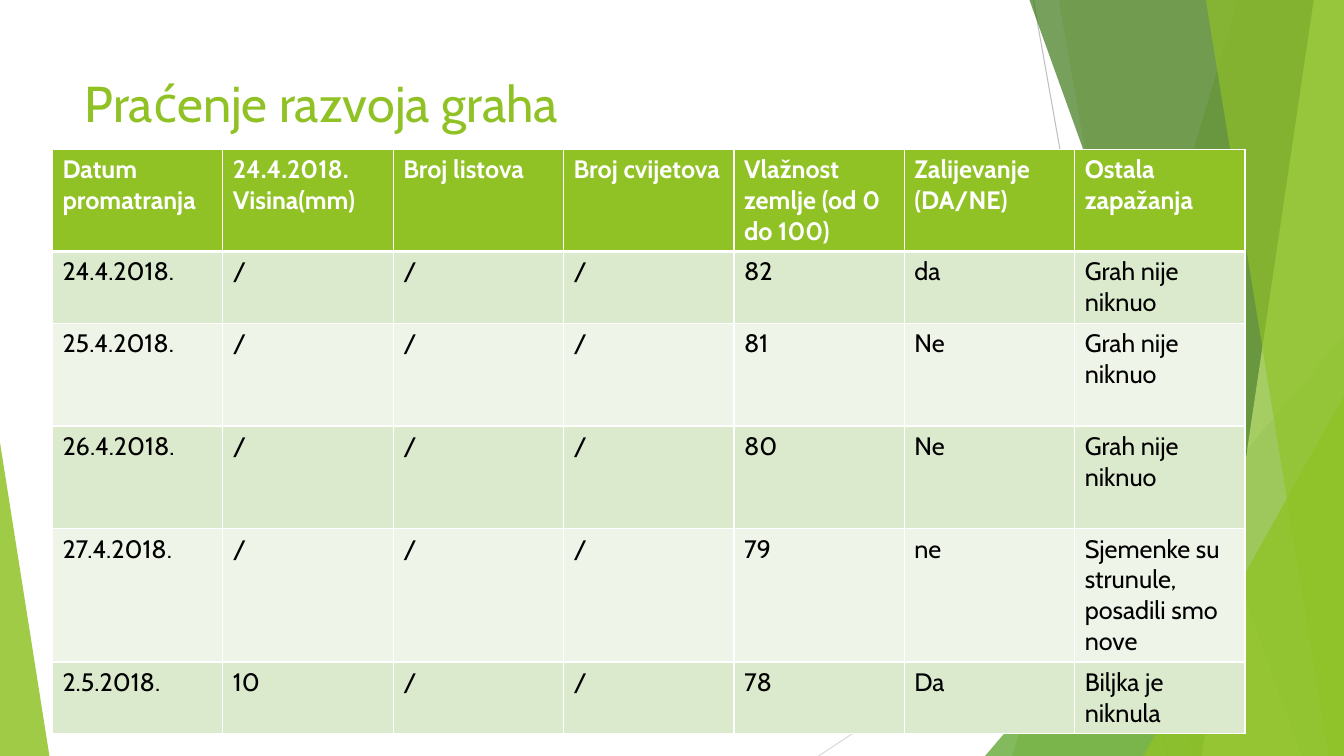
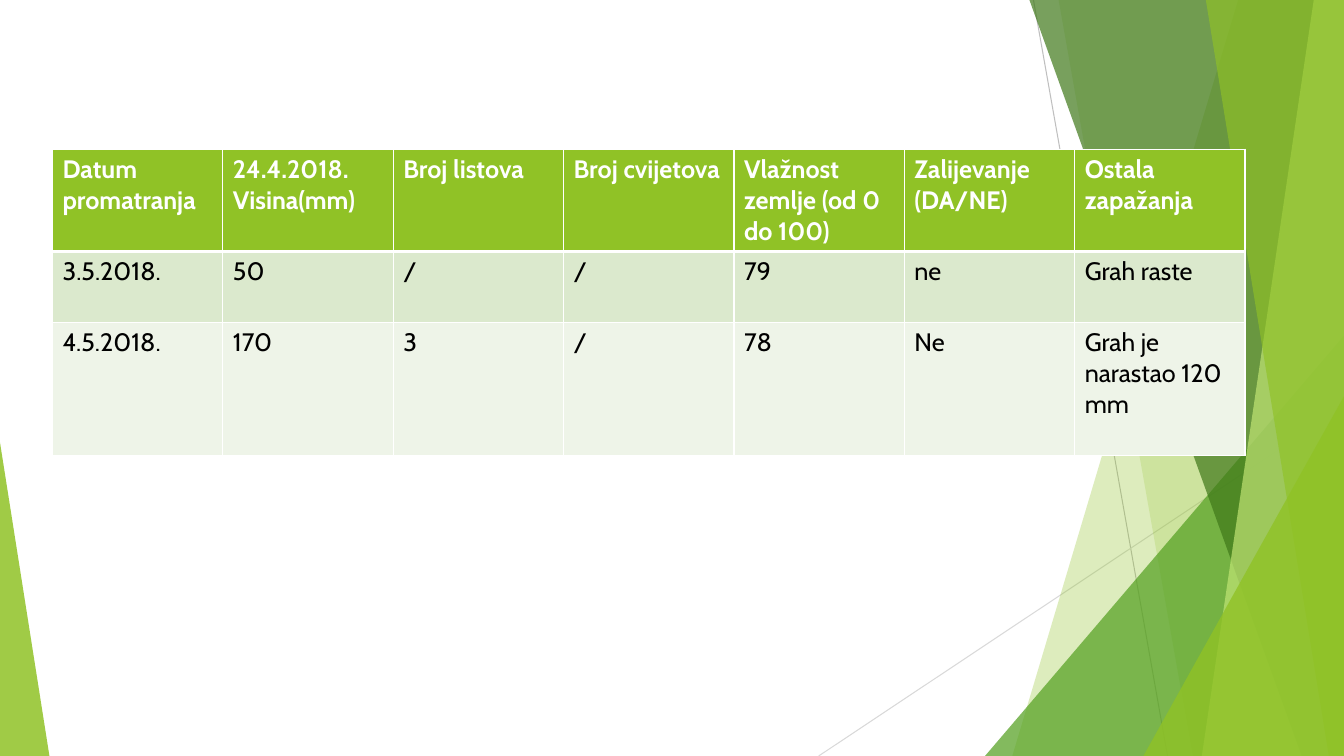
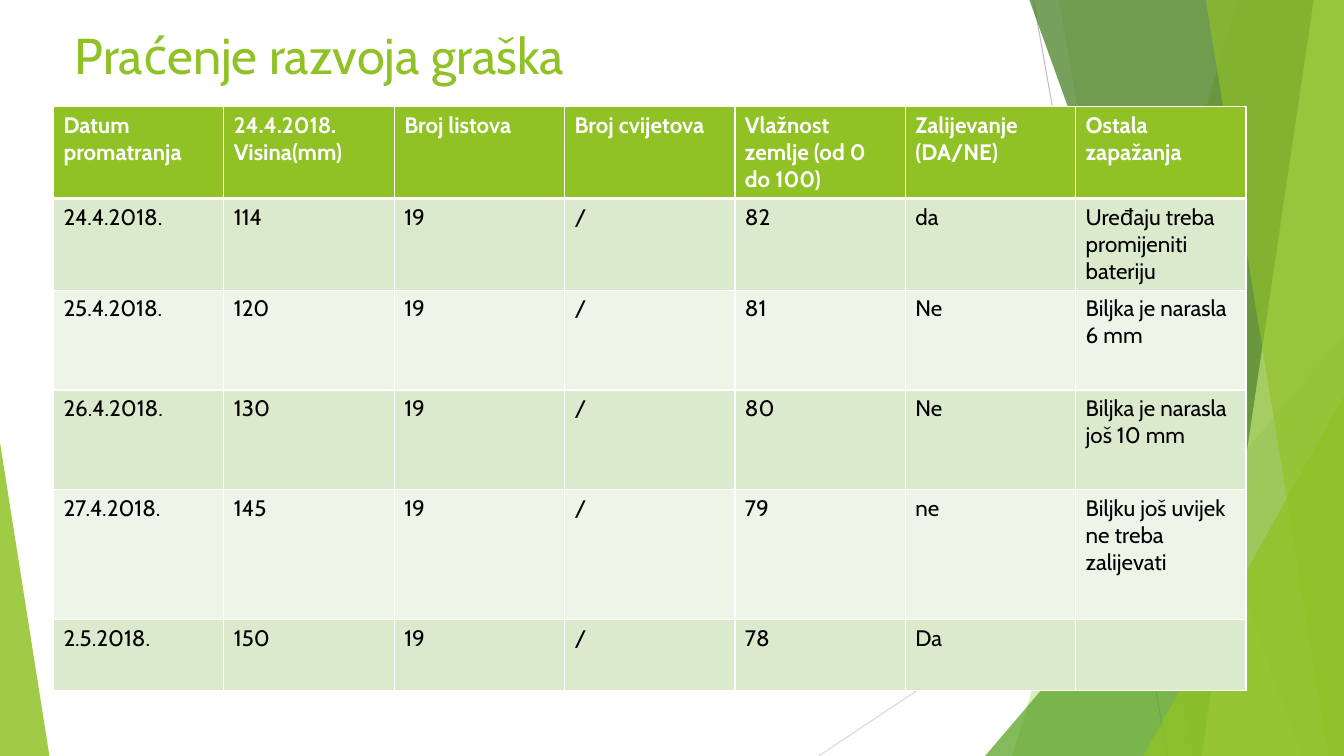
"""Build three slides with tables that track the growth of beans and peas."""
import pptx
import pptx.dml.color
import pptx.enum.shapes
import pptx.enum.text
import pptx.oxml
import pptx.oxml.ns
import pptx.util
from pptx.util import Inches

RGB = pptx.dml.color.RGBColor
GREEN = RGB(0x90, 0xC2, 0x26)
LEAF = RGB(0x54, 0xA0, 0x21)
DARK = RGB(0x3F, 0x78, 0x19)
LIME = RGB(0xC0, 0xE4, 0x74)
BAND = RGB(0xDB, 0xE9, 0xCD)
PALE = RGB(0xEE, 0xF4, 0xE8)
SILVER = RGB(0xBF, 0xBF, 0xBF)
MIST = RGB(0xD9, 0xD9, 0xD9)
WHITE = RGB(0xFF, 0xFF, 0xFF)
BLACK = RGB(0, 0, 0)
FONT = "Cabin"
WIDE, HIGH = 13.33, 7.5
COL = 1.69
HEAD = ["Datum promatranja", "24.4.2018.\nVisina(mm)", "Broj listova", "Broj cvijetova",
        "Vlažnost zemlje (od 0 do 100)", "Zalijevanje (DA/NE)", "Ostala zapažanja"]


def write(frame, text, size=18, color=BLACK, bold=False):
    frame.text = text
    for para in frame.paragraphs:
        para.alignment = pptx.enum.text.PP_ALIGN.LEFT
        para.font.size = pptx.util.Pt(size)
        para.font.name = FONT
        para.font.bold = bold
        para.font.color.rgb = color


def edge(cell, side, width):
    line = pptx.oxml.parse_xml(
        f'<a:{side} {pptx.oxml.ns.nsdecls("a")} w="{pptx.util.Pt(width)}">'
        f'<a:solidFill><a:srgbClr val="{WHITE}"/></a:solidFill></a:{side}>')
    cell._tc.get_or_add_tcPr().append(line)


deck = pptx.Presentation()
deck.slide_width, deck.slide_height = Inches(WIDE), Inches(HIGH)
TITLED, BLANK = deck.slide_layouts[5], deck.slide_layouts[6]

pages = [
    dict(title="Praćenje razvoja graha", spot=(0.74, 0.67), left=0.52, top=1.48, size=18,
         heights=[1, 0.71, 1.02, 1.02, 1.32, 0.71],
         rows=[["24.4.2018.", "/", "/", "/", "82", "da", "Grah nije niknuo"],
               ["25.4.2018.", "/", "/", "/", "81", "Ne", "Grah nije niknuo"],
               ["26.4.2018.", "/", "/", "/", "80", "Ne", "Grah nije niknuo"],
               ["27.4.2018.", "/", "/", "/", "79", "ne",
                "Sjemenke su strunule, posadili smo nove"],
               ["2.5.2018.", "10", "/", "/", "78", "Da", "Biljka je niknula"]]),
    dict(title=None, left=0.52, top=1.48, size=18, heights=[1, 0.7, 1.32],
         rows=[["3.5.2018.", "50", "/", "/", "79", "ne", "Grah raste"],
               ["4.5.2018.", "170", "3", "/", "78", "Ne", "Grah je narastao 120 mm"]]),
    dict(title="Praćenje razvoja graška", spot=(0.64, 0.19), left=0.53, top=1.06, size=16,
         heights=[0.91, 0.91, 0.99, 0.99, 1.29, 0.7],
         rows=[["24.4.2018.", "114", "19", "/", "82", "da",
                "Uređaju treba promijeniti bateriju"],
               ["25.4.2018.", "120", "19", "/", "81", "Ne", "Biljka je narasla 6 mm"],
               ["26.4.2018.", "130", "19", "/", "80", "Ne", "Biljka je narasla još 10 mm"],
               ["27.4.2018.", "145", "19", "/", "79", "ne",
                "Biljku još uvijek ne treba zalijevati"],
               ["2.5.2018.", "150", "19", "/", "78", "Da", ""]]),
]

for page in pages:
    slide = deck.slides.add_slide(TITLED if page["title"] else BLANK)
    if page["title"]:
        title = slide.shapes.title
        title.left, title.top = [Inches(n) for n in page["spot"]]
        title.width, title.height = Inches(9.4), Inches(1.44)
        frame = title.text_frame
        frame.auto_size = pptx.enum.text.MSO_AUTO_SIZE.NONE
        frame.vertical_anchor = pptx.enum.text.MSO_ANCHOR.TOP
        write(frame, page["title"], size=36, color=GREEN)

    data = [HEAD] + page["rows"]
    grid = slide.shapes.add_table(
        len(data), len(HEAD), Inches(page["left"]), Inches(page["top"]),
        Inches(COL * len(HEAD)), Inches(sum(page["heights"]))).table
    for col in grid.columns:
        col.width = Inches(COL)
    for r, texts in enumerate(data):
        grid.rows[r].height = Inches(page["heights"][r])
        for c, text in enumerate(texts):
            cell = grid.cell(r, c)
            edge(cell, "lnL", 1)
            edge(cell, "lnR", 1)
            edge(cell, "lnT", 3 if r == 1 else 1)
            edge(cell, "lnB", 3 if r == 0 else 1)
            cell.fill.solid()
            cell.fill.fore_color.rgb = GREEN if r == 0 else BAND if r % 2 else PALE
            write(cell.text_frame, text, size=page["size"],
                  color=BLACK if r else WHITE, bold=r == 0)

first = deck.slides[0].shapes
decor = []
for x1, y1, x2, y2, color in [(10.25, 0, 11.58, HIGH, SILVER), (WIDE, 4.03, 8.12, HIGH, MIST)]:
    line = first.add_connector(pptx.enum.shapes.MSO_CONNECTOR.STRAIGHT,
                               Inches(x1), Inches(y1), Inches(x2), Inches(y2))
    line.line.color.rgb = color
    line.line.width = pptx.util.Pt(0.75)
    pptx.oxml.ns.qn("a:effectLst")
    line.element.spPr.append(pptx.oxml.parse_xml(f'<a:effectLst {pptx.oxml.ns.nsdecls("a")}/>'))
    decor.append(line)

shards = [
    ("wedge", (12.28, 10.04), GREEN, 30),
    ("wedge", (10.5, 11.83), GREEN, 20),
    ("peak", (9.77, 3.33, WIDE, 1), LEAF, 72),
    ("wedge", (10.21, 12.91), DARK, 70),
    ("wedge", (13.03, 11.92), LIME, 70),
    ("wedge", (11.96, 13.18), GREEN, 65),
    ("peak", (11.34, 3.93, WIDE, 1), GREEN, 80),
    ("peak", (0, 4.39, 0.49, 0), GREEN, 85),
]
for kind, dims, color, alpha in shards:
    if kind == "wedge":
        head, foot = dims
        path = first.build_freeform(Inches(head), 0)
        path.add_line_segments([(Inches(x), Inches(y)) for x, y in
                                [(WIDE, 0), (WIDE, HIGH), (foot, HIGH)]])
        shard = path.convert_to_shape()
    else:
        left, top, right, tip = dims
        shard = first.add_shape(pptx.enum.shapes.MSO_SHAPE.ISOSCELES_TRIANGLE, Inches(left),
                                Inches(top), Inches(right - left), Inches(HIGH - top))
        shard.adjustments[0] = tip
    shard.shadow.inherit = False
    shard.line.fill.background()
    shard.fill.solid()
    shard.fill.fore_color.rgb = color
    tint = shard.element.spPr.find(".//" + pptx.oxml.ns.qn("a:srgbClr"))
    tint.append(pptx.oxml.parse_xml(
        f'<a:alpha {pptx.oxml.ns.nsdecls("a")} val="{alpha * 1000}"/>'))
    decor.append(shard)

tree = deck.slide_master.shapes.element
for n, item in enumerate(decor):
    item.element.xpath("./*/p:cNvPr")[0].set("id", str(100 + n))
    tree.insert(2 + n, item.element)

deck.save("out.pptx")
